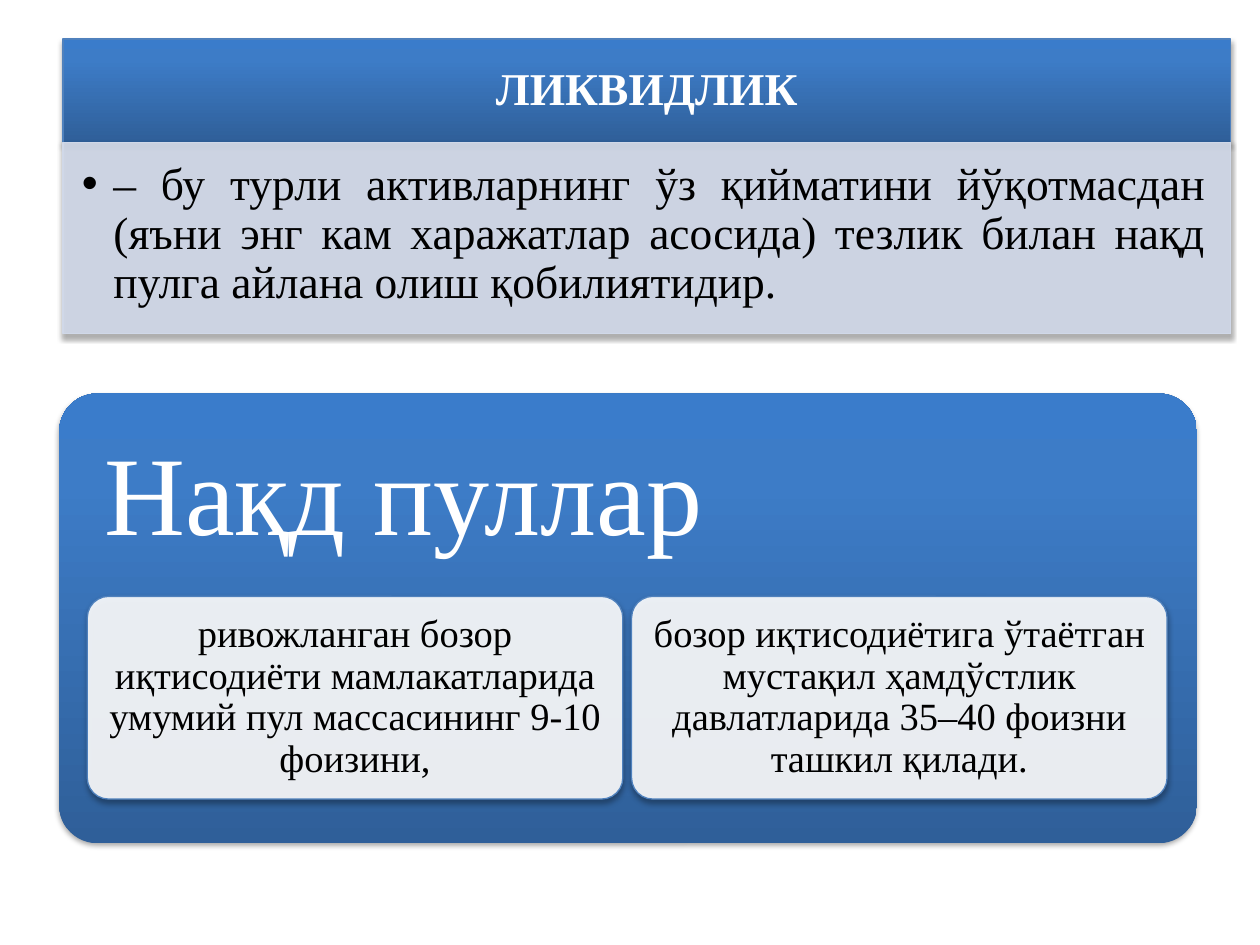
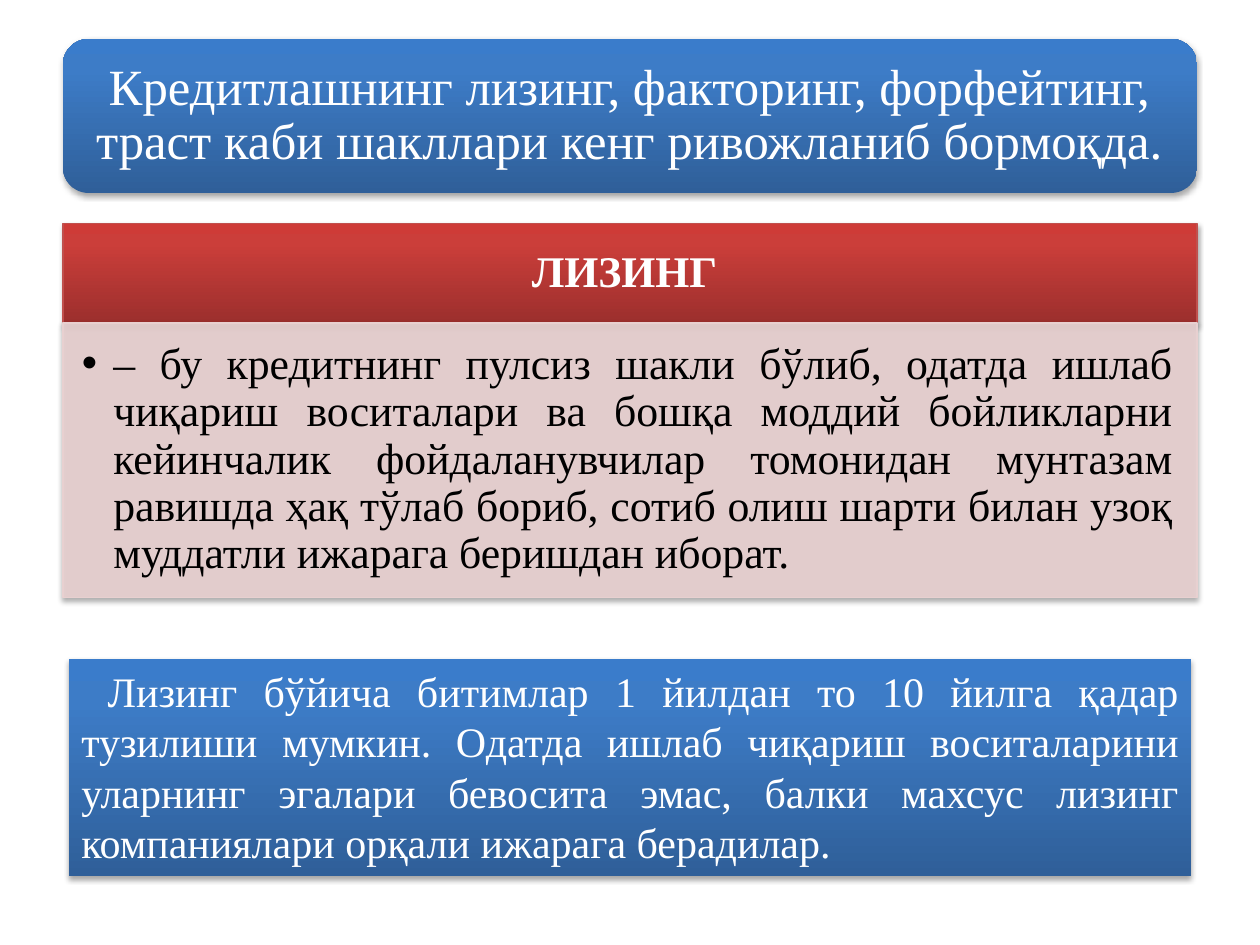
from copy import deepcopy

from lxml import etree
from pptx import Presentation
from pptx.dml.color import RGBColor
from pptx.enum.shapes import MSO_SHAPE
from pptx.enum.text import MSO_ANCHOR, MSO_AUTO_SIZE, PP_ALIGN
from pptx.oxml.ns import qn
from pptx.util import Pt

RECT, ROUNDED = MSO_SHAPE.RECTANGLE, MSO_SHAPE.ROUNDED_RECTANGLE
TOP, MIDDLE = MSO_ANCHOR.TOP, MSO_ANCHOR.MIDDLE
LEFT, CENTER, JUSTIFY = PP_ALIGN.LEFT, PP_ALIGN.CENTER, PP_ALIGN.JUSTIFY
NO_AUTOFIT = MSO_AUTO_SIZE.NONE

WHITE = RGBColor(0xFF, 0xFF, 0xFF)
BLACK = RGBColor(0x00, 0x00, 0x00)
BLUE = RGBColor(0x4F, 0x81, 0xBD)
RED = RGBColor(0xC0, 0x50, 0x4D)
PALE_BLUE = RGBColor(0xD0, 0xD8, 0xE8)
PALE_RED = RGBColor(0xE8, 0xD0, 0xD0)
BLUE_BLEND = (RGBColor(0x2F, 0x5F, 0x99), RGBColor(0x3D, 0x7C, 0xC7), RGBColor(0x3A, 0x7C, 0xCB))
RED_BLEND = (RGBColor(0x9C, 0x2F, 0x2D), RGBColor(0xCB, 0x3E, 0x3A), RGBColor(0xCE, 0x3B, 0x37))
BLEND_POSITIONS = (0, 0.8, 1)

FONT = "Times New Roman"
TITLE_AND_CONTENT = 1


class Deck:
    def __init__(self):
        self.presentation = Presentation()
        self.presentation.slide_width = Pt(720)
        self.presentation.slide_height = Pt(540)
        self.slide = None

    def new_slide(self):
        layout = self.presentation.slide_layouts[TITLE_AND_CONTENT]
        self.slide = self.presentation.slides.add_slide(layout)

    def panel(self, box, kind=RECT, corner=None, outline=None):
        panel = self.slide.shapes.add_shape(kind, *map(Pt, box))
        if corner:
            panel.adjustments[0] = corner
        if outline:
            panel.line.color.rgb = outline
            panel.line.width = Pt(0.75)
        else:
            panel.line.fill.background()
        self.add_shadow(panel)
        return panel

    def blended_panel(self, box, blend=BLUE_BLEND, **style):
        panel = self.panel(box, **style)
        panel.fill.gradient()
        panel.fill.gradient_angle = 90
        stops = panel.element.spPr.find(".//" + qn("a:gsLst"))
        stops.append(deepcopy(stops[-1]))
        for stop, color, position in zip(panel.fill.gradient_stops, blend, BLEND_POSITIONS):
            stop.color.rgb = color
            stop.position = position
        return panel

    def pale_panel(self, box, color, **style):
        panel = self.panel(box, **style)
        panel.fill.solid()
        panel.fill.fore_color.rgb = color
        self.set_alpha(panel.element.spPr.find(qn("a:solidFill")), 90)
        return panel

    def add_shadow(self, panel):
        panel.shadow.inherit = False
        effects = panel.element.spPr.find(qn("a:effectLst"))
        shadow = etree.SubElement(effects, qn("a:outerShdw"), blurRad="40000",
                                  dist="23000", dir="5400000", rotWithShape="0")
        etree.SubElement(shadow, qn("a:srgbClr"), val="000000")
        self.set_alpha(shadow, 35)

    def set_alpha(self, parent, percent):
        color = parent.find(qn("a:srgbClr"))
        etree.SubElement(color, qn("a:alpha"), val=str(percent * 1000))

    def set_text(self, holder, text, size, color=WHITE, bold=False, align=CENTER,
                 anchor=MIDDLE, insets=(14, 8, 14, 8), spacing=0.9, indent=(0, 0)):
        frame = holder.text_frame
        frame.text = text
        frame.word_wrap = True
        frame.auto_size = NO_AUTOFIT
        frame.vertical_anchor = anchor
        (frame.margin_left, frame.margin_top,
         frame.margin_right, frame.margin_bottom) = map(Pt, insets)
        paragraph = frame.paragraphs[0]
        paragraph.alignment = align
        paragraph.line_spacing = spacing
        paragraph.space_before = Pt(0)
        properties = paragraph._p.get_or_add_pPr()
        properties.set("marL", str(Pt(indent[0])))
        properties.set("indent", str(Pt(indent[1])))
        for run in paragraph.runs:
            run.font.name = FONT
            run.font.size = Pt(size)
            run.font.bold = bold
            run.font.color.rgb = color

    def place(self, placeholder, box):
        placeholder.left, placeholder.top, placeholder.width, placeholder.height = map(Pt, box)
        self.slide.shapes.element.append(placeholder.element)
        return placeholder

    def title(self, text, box, size, **style):
        self.set_text(self.place(self.slide.shapes.title, box), text, size, **style)

    def definition(self, text, box, size, color):
        self.pale_panel(box, color, outline=color)
        body = self.place(self.slide.placeholders[1], box)
        self.set_text(body, text, size, color=BLACK, align=JUSTIFY, anchor=TOP,
                      insets=(10.8, 10.8, 14, 16), indent=(18, -18))

    def card(self, text, box):
        card = self.pale_panel(box, WHITE, kind=ROUNDED, corner=0.105, outline=BLUE)
        self.set_text(card, text, 22, color=BLACK, insets=(6.5,) * 4)


def liquidity_slide(deck):
    deck.new_slide()
    header = (36, 22.3, 667.4, 59)
    deck.blended_panel(header, outline=BLUE)
    deck.title("ЛИКВИДЛИК", header, 26, bold=True)
    deck.definition(
        "– бу турли активларнинг ўз қийматини йўқотмасдан (яъни энг кам харажатлар "
        "асосида) тезлик билан нақд пулга айлана олиш қобилиятидир.",
        (36, 81.3, 667.4, 109.5), 26, PALE_BLUE)

    cash = deck.blended_panel((33.8, 224.9, 650.2, 257), kind=ROUNDED, corner=0.085)
    deck.set_text(cash, "Нақд пуллар", 64, align=LEFT, anchor=TOP,
                  insets=(19.4, 19.4, 19.4, 159))
    shares = (
        "ривожланган бозор иқтисодиёти мамлакатларида умумий пул массасининг 9-10 фоизини,",
        "бозор иқтисодиётига ўтаётган мустақил ҳамдўстлик давлатларида 35–40 фоизни ташкил қилади.",
    )
    for column, share in enumerate(shares):
        deck.card(share, (49.9 + column * 311, 340.8, 306, 115.8))


def leasing_slide(deck):
    deck.new_slide()
    banner = (36, 22.3, 648, 88)
    deck.blended_panel(banner, kind=ROUNDED)
    deck.title("Кредитлашнинг лизинг, факторинг, форфейтинг, траст каби шакллари "
               "кенг ривожланиб бормоқда.", banner, 29, insets=(13,) * 4)

    leasing = deck.blended_panel((36, 127.8, 648, 56.7), blend=RED_BLEND, outline=RED)
    deck.set_text(leasing, "ЛИЗИНГ ", 25, bold=True)
    deck.definition(
        "– бу кредитнинг пулсиз шакли бўлиб, одатда ишлаб чиқариш воситалари ва бошқа "
        "моддий бойликларни кейинчалик фойдаланувчилар томонидан мунтазам равишда ҳақ "
        "тўлаб бориб, сотиб олиш шарти билан узоқ муддатли ижарага беришдан иборат.",
        (36, 184.5, 648, 157), 25, PALE_RED)

    terms = deck.blended_panel((39.4, 376.6, 641.4, 123.8))
    deck.set_text(terms,
                  "Лизинг бўйича битимлар 1 йилдан то 10 йилга қадар тузилиши мумкин. "
                  "Одатда ишлаб чиқариш воситаларини уларнинг эгалари бевосита эмас, балки "
                  "махсус лизинг компаниялари орқали ижарага берадилар.",
                  24, align=JUSTIFY, anchor=TOP, insets=(7.2, 3.6, 7.2, 3.6),
                  spacing=1.0, indent=(0, 15))


def main():
    deck = Deck()
    liquidity_slide(deck)
    leasing_slide(deck)
    deck.presentation.save("out.pptx")


if __name__ == "__main__":
    main()
